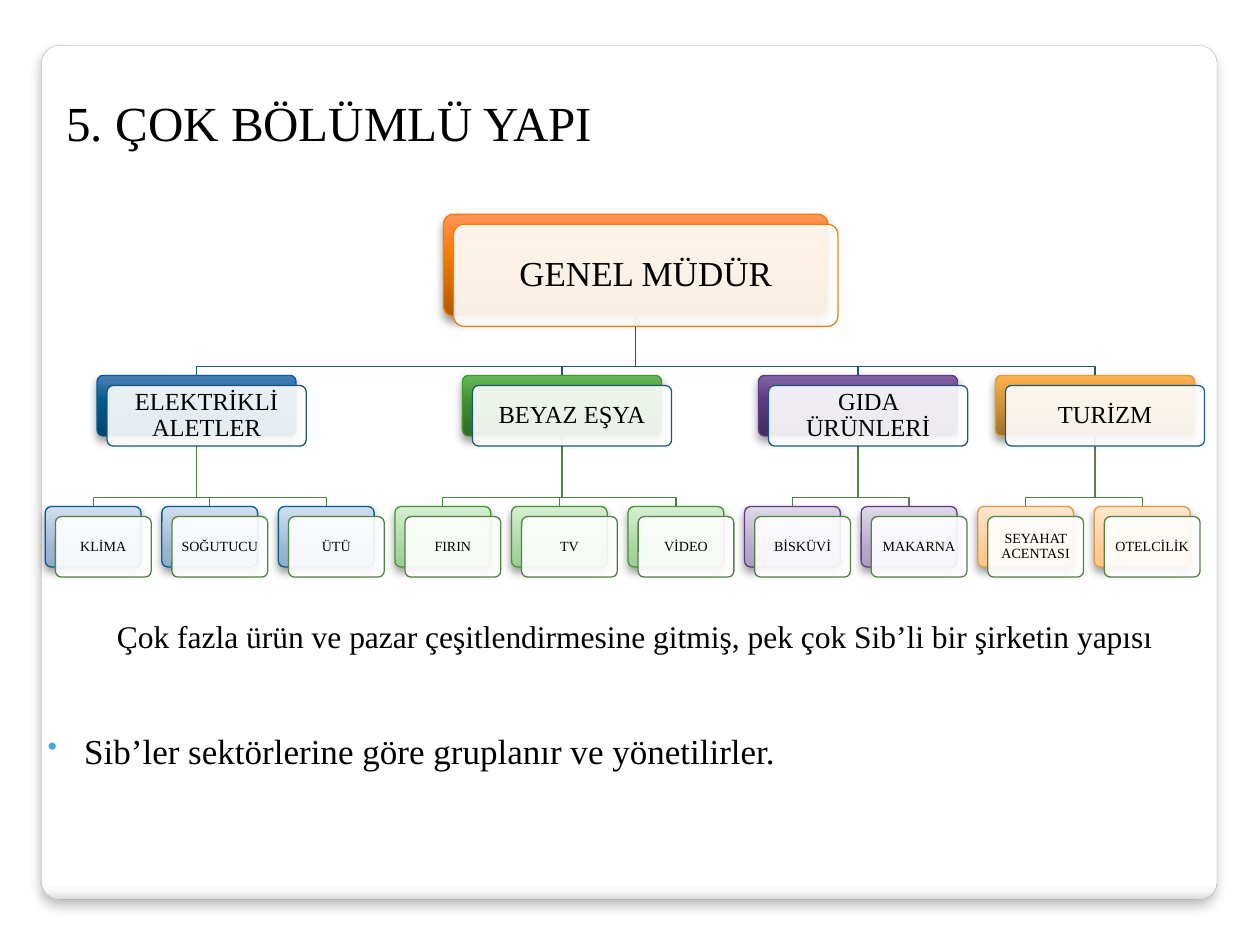
"""Build an organisation chart slide for a multidivisional structure."""
from dataclasses import dataclass

from lxml import etree
from pptx import Presentation
from pptx import util as u
from pptx.dml.color import RGBColor
from pptx.enum import shapes, text
from pptx.oxml import ns


@dataclass(frozen=True)
class Theme:
    font: str = "Times New Roman"
    ink: str = "000000"
    card: str = "FFFFFF"
    edge: str = "A4A4A4"
    bullet: str = "4EA5D8"
    root: str = "F07F09"
    unit: str = "1B587C"
    leaf: str = "4E8542"
    title: int = 28
    body: int = 20
    note: int = 18
    rule: float = 0.75


@dataclass(frozen=True)
class Tone:
    line: str
    deep: tuple
    pale: tuple = ()


@dataclass(frozen=True)
class Level:
    top: float
    wide: float
    high: float
    size: int
    inset: float
    line: str


@dataclass(frozen=True)
class Unit:
    name: str
    left: float
    tone: Tone
    leaves: tuple


T = Theme()
ROOT = Level(1.7, 3.05, 0.81, 20, 0.08, T.root)
UNIT = Level(2.98, 1.58, 0.48, 14, 0.06, T.unit)
LEAF = Level(4.02, 0.76, 0.48, 8, 0.03, T.leaf)
CHIEF, FIRST, STEP, SHIFT, BEND = 3.52, 0.36, 0.925, 0.08, 0.07

FLAME = Tone("F97F00", ((0, "B05A00"), (60, "F47C00"), (100, "FF945C")))
BLUE = Tone("035E94", ((0, "00436A"), (60, "035C91"), (100, "4A80B7")),
            ((0, "90ABCB"), (25, "99B3D2"), (100, "D1DEEE")))
GREEN = Tone("439631", ((0, "2F6B22"), (60, "429230"), (100, "66B959")),
             ((0, "9DCD96"), (25, "A5D49E"), (100, "D7EED3")))
PLUM = Tone("603C84", ((0, "442A5E"), (60, "5E3B81"), (100, "8364A8")),
            ((0, "AD9CC3"), (25, "B5A5CA"), (100, "DFD7E9")))
GOLD = Tone("DB9E3F", ((0, "9D702B"), (60, "D69A3E"), (100, "FFB14C")),
            ((0, "FFC687"), (25, "FFCB92"), (100, "FFE7CF")))
UNITS = (
    Unit("ELEKTRİKLİ ALETLER", 0.77, BLUE, ("KLİMA", "SOĞUTUCU", "ÜTÜ")),
    Unit("BEYAZ EŞYA", 3.67, GREEN, ("FIRIN", "TV", "VİDEO")),
    Unit("GIDA ÜRÜNLERİ", 6.02, PLUM, ("BİSKÜVİ", "MAKARNA")),
    Unit("TURİZM", 7.9, GOLD, ("SEYAHAT ACENTASI", "OTELCİLİK")),
)


def add(parent, tag: str, **attrs):
    return etree.SubElement(parent, ns.qn(tag), {k: str(v) for k, v in attrs.items()})


def box(slide, left: float, top: float, wide: float, high: float, bend: float):
    shape = slide.shapes.add_shape(
        shapes.MSO_SHAPE.ROUNDED_RECTANGLE, *map(u.Inches, (left, top, wide, high)))
    shape.adjustments[0] = bend
    shape.shadow.inherit = False
    return shape


def stroke(shape, color: str, width: float = T.rule) -> None:
    shape.line.color.rgb = RGBColor.from_string(color)
    shape.line.width = u.Pt(width)


def blend(shape, stops: tuple, angle: int) -> None:
    shape.fill.gradient()
    shape.fill.gradient_angle = angle
    group = shape.element.spPr.find(".//" + ns.qn("a:gsLst"))
    for old in list(group):
        group.remove(old)
    for place, color in stops:
        add(add(group, "a:gs", pos=place * 1000), "a:srgbClr", val=color)


def shade(shape, alpha: int, blur: float, dist: float) -> None:
    effect = shape.element.spPr.find(ns.qn("a:effectLst"))
    outer = add(effect, "a:outerShdw", blurRad=u.Pt(blur), dist=u.Pt(dist),
                dir=5400000, algn="ctr", rotWithShape=0)
    add(add(outer, "a:srgbClr", val=T.ink), "a:alpha", val=alpha * 1000)


def style(part, size: int, space: float = 1.0) -> None:
    part.line_spacing = space
    for run in part.runs:
        run.font.name = T.font
        run.font.size = u.Pt(size)
        run.font.color.rgb = RGBColor.from_string(T.ink)


def label(slide, words: str, place: tuple, size: int, space: float = 1.0):
    frame = slide.shapes.add_textbox(*map(u.Inches, place)).text_frame
    frame.word_wrap = True
    frame.text = words
    style(frame.paragraphs[0], size, space)
    return frame


def node(slide, words: str, left: float, level: Level, tone: Tone, stops: tuple) -> None:
    back = box(slide, left, level.top, level.wide, level.high, 0.1)
    blend(back, stops, 90)
    stroke(back, tone.line)
    shade(back, 40, 5.2, 3)

    card = box(slide, left + SHIFT, level.top + SHIFT, level.wide, level.high, 0.1)
    card.fill.solid()
    card.fill.fore_color.rgb = RGBColor.from_string(T.card)
    color = card.element.spPr.find(ns.qn("a:solidFill"))[0]
    add(color, "a:alpha", val=90000)
    stroke(card, level.line)
    frame = card.text_frame
    frame.word_wrap = True
    frame.vertical_anchor = text.MSO_ANCHOR.MIDDLE
    frame.margin_left = frame.margin_right = u.Inches(level.inset)
    frame.margin_top = frame.margin_bottom = u.Inches(level.inset)
    frame.text = words
    frame.paragraphs[0].alignment = text.PP_ALIGN.CENTER
    style(frame.paragraphs[0], level.size, 0.9)


def link(slide, left: float, upper: Level, to: float, lower: Level) -> None:
    start, end = left + upper.wide / 2, to + lower.wide / 2
    turn = lower.top - BEND
    points = [(u.Inches(x), u.Inches(y)) for x, y in (
        (start, upper.top + upper.high), (start, turn), (end, turn), (end, lower.top))]
    pen = slide.shapes.build_freeform(*points[0])
    pen.add_line_segments(points[1:], close=False)
    wire = pen.convert_to_shape()
    wire.fill.background()
    wire.shadow.inherit = False
    stroke(wire, lower.line)


def chart(slide) -> None:
    spots = iter(FIRST + STEP * i for i in range(sum(len(d.leaves) for d in UNITS)))
    rows = [(unit, [(name, next(spots)) for name in unit.leaves]) for unit in UNITS]
    for unit, leaves in rows:
        link(slide, CHIEF, ROOT, unit.left, UNIT)
        for _, left in leaves:
            link(slide, unit.left, UNIT, left, LEAF)
    node(slide, "GENEL MÜDÜR", CHIEF, ROOT, FLAME, FLAME.deep)
    for unit, leaves in rows:
        node(slide, unit.name, unit.left, UNIT, unit.tone, unit.tone.deep)
        for name, left in leaves:
            node(slide, name, left, LEAF, unit.tone, unit.tone.pale)


def main() -> None:
    deck = Presentation()
    deck.slide_width, deck.slide_height = u.Inches(10), u.Inches(7.5)
    slide = deck.slides.add_slide(deck.slide_layouts[6])

    panel = box(slide, 0.33, 0.36, 9.33, 6.78, 0.021)
    blend(panel, ((0, "FFFFFF"), (98, "FFFFFF"), (99, "F7F7F7"), (100, "DADADA")), 270)
    stroke(panel, T.edge, 0.16)
    shade(panel, 25, 6, 4)

    title = label(slide, "5. ÇOK BÖLÜMLÜ YAPI", (0.43, 0.68, 8.5, 0.58), T.title)
    title.vertical_anchor = text.MSO_ANCHOR.MIDDLE
    point = label(slide, "Sib’ler sektörlerine göre gruplanır ve yönetilirler.",
                  (0.28, 5.72, 6.22, 0.55), T.body, 1.05)
    props = point.paragraphs[0]._p.get_or_add_pPr()
    props.set("marL", str(u.Inches(0.29)))
    props.set("indent", str(-u.Inches(0.29)))
    add(add(props, "a:buClr"), "a:srgbClr", val=T.bullet)
    add(props, "a:buSzPct", val=80000)
    add(props, "a:buChar", char="•")

    chart(slide)
    label(slide, "Çok fazla ürün ve pazar çeşitlendirmesine gitmiş, "
          "pek çok Sib’li bir şirketin yapısı", (0.83, 4.83, 9.84, 0.42), T.note, 1.05)
    deck.save("out.pptx")


if __name__ == "__main__":
    main()
